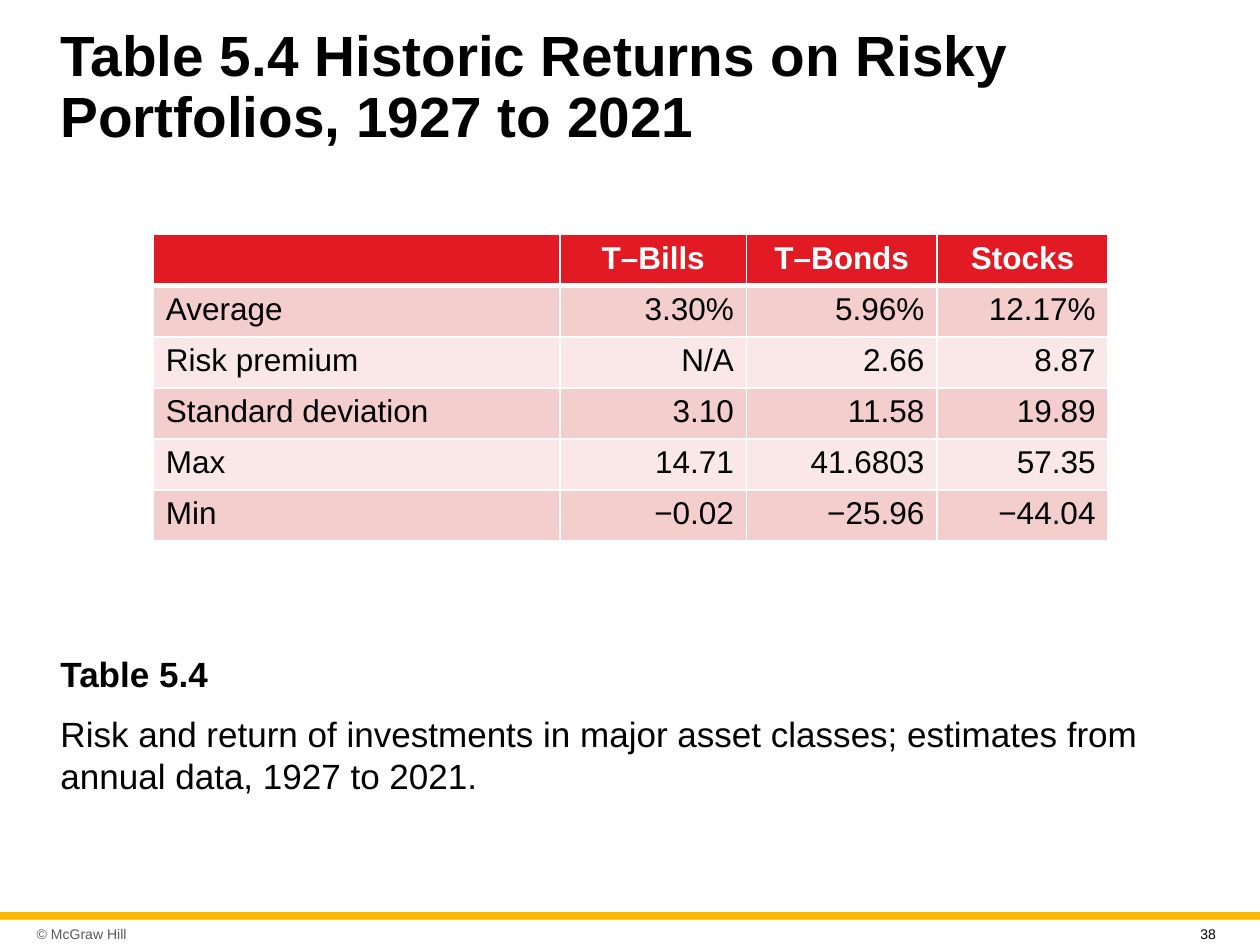
from collections import namedtuple
from dataclasses import dataclass
from lxml.etree import SubElement
from pptx import Presentation
from pptx.dml.color import RGBColor
from pptx.enum.shapes import MSO_SHAPE
from pptx.enum.text import MSO_ANCHOR, PP_ALIGN
from pptx.oxml.ns import qn
from pptx.util import Cm, Pt

Box = namedtuple("Box", "left top width height")


@dataclass(frozen=True)
class Theme:
    font: str = "Arial"
    ink: str = "000000"
    white: str = "FFFFFF"
    gray: str = "595959"
    gold: str = "FFB600"
    red: str = "E21A23"
    rose: str = "F4CDCD"
    blush: str = "FAE8E8"
    title: float = 32.4
    body: int = 20
    cell: int = 18
    small: int = 8


THEME = Theme()
WIDTHS = 8.2, 3.76, 3.84, 3.45
ROWS = [
    ("", "T–Bills", "T–Bonds", "Stocks"),
    ("Average", "3.30%", "5.96%", "12.17%"),
    ("Risk premium", "N/A", "2.66", "8.87"),
    ("Standard deviation", "3.10", "11.58", "19.89"),
    ("Max", "14.71", "41.6803", "57.35"),
    ("Min", "−0.02", "−25.96", "−44.04"),
]


def place(box):
    return [Cm(size) for size in box]


def style(para, size, color=THEME.ink, bold=False):
    for run in para.runs:
        font = run.font
        font.name, font.size, font.bold = THEME.font, Pt(size), bold
        font.color.rgb = RGBColor.from_string(color)


def add_text(slide, box, text, anchor=MSO_ANCHOR.TOP):
    frame = slide.shapes.add_textbox(*place(box)).text_frame
    frame.word_wrap = True
    frame.vertical_anchor = anchor
    frame.text = text
    return frame


def add_title(slide, box):
    text = "Table 5.4 Historic Returns on Risky Portfolios, 1927 to 2021"
    para = add_text(slide, box, text, MSO_ANCHOR.MIDDLE).paragraphs[0]
    para.line_spacing = 0.9
    style(para, THEME.title, bold=True)


def add_edges(cell, head):
    props = cell._tc.get_or_add_tcPr()
    for side in "LRTB":
        thick = head and side == "B"
        line = SubElement(props, qn(f"a:ln{side}"), w=str(Pt(3 if thick else 1)))
        fill = SubElement(line, qn("a:solidFill"))
        SubElement(fill, qn("a:srgbClr"), val=THEME.white)


def add_grid(slide, box):
    grid = slide.shapes.add_table(len(ROWS), len(WIDTHS), *place(box)).table
    for col, width in zip(grid.columns, WIDTHS):
        col.width = Cm(width)
    for i, row in enumerate(ROWS):
        head = i == 0
        shade = THEME.red if head else (THEME.blush, THEME.rose)[i % 2]
        for j, text in enumerate(row):
            cell = grid.cell(i, j)
            add_edges(cell, head)
            cell.fill.solid()
            cell.fill.fore_color.rgb = RGBColor.from_string(shade)
            para = cell.text_frame.paragraphs[0]
            para.text = text
            para.font.size = Pt(THEME.cell)
            if j:
                para.alignment = PP_ALIGN.CENTER if head else PP_ALIGN.RIGHT
            style(para, THEME.cell, THEME.white if head else THEME.ink, head)


def add_note(slide, box):
    frame = add_text(slide, box, "Table 5.4")
    style(frame.paragraphs[0], THEME.body, bold=True)
    para = frame.add_paragraph()
    para.text = ("Risk and return of investments in major asset classes; "
                 "estimates from annual data, 1927 to 2021.")
    para.space_before = Pt(10)
    style(para, THEME.body)


def add_foot(slide, box):
    left, top, width, _ = box
    bar = slide.shapes.add_shape(
        MSO_SHAPE.RECTANGLE, *place((left, top, width, 0.15)))
    bar.shadow.inherit = False
    bar.fill.solid()
    bar.fill.fore_color.rgb = RGBColor.from_string(THEME.gold)
    bar.line.fill.background()
    spot = Box(left + 0.61, top + 0.13, 3.43, 0.61)
    frame = add_text(slide, spot, "© McGraw Hill", MSO_ANCHOR.MIDDLE)
    frame.margin_left = frame.margin_right = Cm(0.13)
    style(frame.paragraphs[0], THEME.small, THEME.gray)
    spot = Box(left + width - 1.45, top + 0.15, 1, 0.46)
    style(add_text(slide, spot, "38").paragraphs[0], THEME.small)


def main():
    deck = Presentation()
    deck.slide_width, deck.slide_height = Cm(25.4), Cm(19.05)
    slide = deck.slides.add_slide(deck.slide_layouts[6])
    add_foot(slide, Box(0, 18.39, 25.4, 0.66))
    add_title(slide, Box(0.97, 0.53, 23.5, 2.51))
    add_grid(slide, Box(3.09, 4.73, sum(WIDTHS), 6.18))
    add_note(slide, Box(0.97, 13.03, 23.5, 3.12))
    deck.save("out.pptx")


if __name__ == "__main__":
    main()
